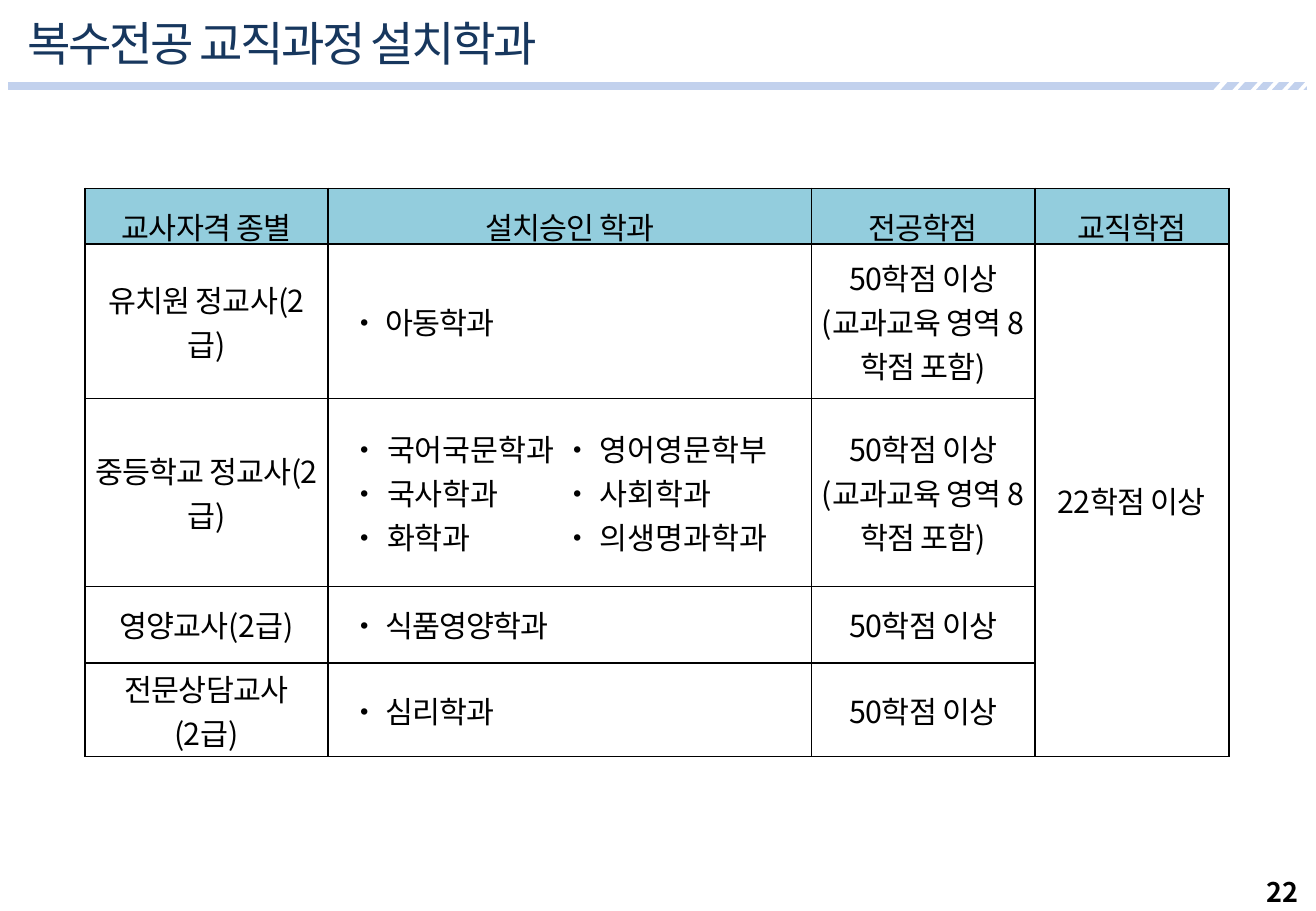
from dataclasses import dataclass

from lxml import etree
from pptx import Presentation
from pptx.dml.color import RGBColor
from pptx.enum.shapes import MSO_CONNECTOR
from pptx.enum.text import MSO_ANCHOR, PP_ALIGN
from pptx.oxml.ns import qn
from pptx.util import Pt

STRAIGHT = MSO_CONNECTOR.STRAIGHT
MIDDLE = MSO_ANCHOR.MIDDLE
LEFT, CENTER = PP_ALIGN.LEFT, PP_ALIGN.CENTER

FONT = "Noto Sans CJK KR"
COLORS = {
    "text": "000000",
    "title": "17375E",
    "rule": "C2D1ED",
    "slash": "FFFFFF",
    "header": "93CDDD",
    "border": "000000",
}

COLUMN_WIDTHS = [144, 286.5, 132.5, 115]
ROW_HEIGHTS = [33, 91.5, 111.5, 45.5, 55.5]
DEPARTMENT_COLUMN = 1
SECOND_DEPARTMENT_TAB = 126
CREDITS = "50학점 이상"
CREDITS_WITH_EDUCATION = CREDITS + "\n(교과교육 영역 8학점 포함)"
TABLE_ROWS = [
    ["교사자격 종별", "설치승인 학과", "전공학점", "교직학점"],
    ["유치원 정교사(2급)", "• 아동학과", CREDITS_WITH_EDUCATION, "22학점 이상"],
    ["중등학교 정교사(2급)",
     "• 국어국문학과\t• 영어영문학부\n• 국사학과\t• 사회학과\n• 화학과\t• 의생명과학과",
     CREDITS_WITH_EDUCATION, ""],
    ["영양교사(2급)", "• 식품영양학과", CREDITS, ""],
    ["전문상담교사\n(2급)", "• 심리학과", CREDITS, ""],
]


@dataclass
class TextStyle:
    size: float
    color: str = "text"
    bold: bool = False
    spacing: float = 0


@dataclass
class Label:
    text: str
    left: float
    top: float
    width: float
    height: float
    style: TextStyle
    wrap: bool


@dataclass
class Line:
    start: tuple[float, float]
    end: tuple[float, float]
    color: str
    width: float


LABELS = [
    Label("22", 743.8, 515.5, 54, 26.6, TextStyle(16, bold=True), False),
    Label("복수전공 교직과정 설치학과", 9.4, 5, 405.4, 41,
          TextStyle(28, "title", spacing=-1.5), True),
]
SLASH_LEFTS = [720, 730.8, 741.6, 751, 760.3, 769.7]
LINES = [Line((774.7, 51.1), (5, 51.1), "rule", 4.5)] + [
    Line((left, 54.7), (left + 6.5, 47.5), "slash", 2.25 if index else 3)
    for index, left in enumerate(SLASH_LEFTS)
]


def rgb(name: str) -> RGBColor:
    return RGBColor.from_string(COLORS[name])


def format_runs(paragraph, style: TextStyle) -> None:
    for run in paragraph.runs:
        run.font.name = FONT
        run.font.size = Pt(style.size)
        run.font.bold = style.bold
        run.font.color.rgb = rgb(style.color)
        properties = run.font._element
        properties.set("spc", str(int(style.spacing * 100)))
        etree.SubElement(properties, qn("a:ea"), typeface=FONT)


def add_label(slide, label: Label) -> None:
    shape = slide.shapes.add_textbox(
        Pt(label.left), Pt(label.top), Pt(label.width), Pt(label.height))
    shape.text_frame.word_wrap = label.wrap
    shape.text_frame.text = label.text
    format_runs(shape.text_frame.paragraphs[0], label.style)


def add_line(slide, line: Line) -> None:
    connector = slide.shapes.add_connector(
        STRAIGHT, *[Pt(value) for value in line.start + line.end])
    connector.line.color.rgb = rgb(line.color)
    connector.line.width = Pt(line.width)
    etree.SubElement(connector._element.spPr, qn("a:effectLst"))


def add_borders(cell) -> None:
    properties = cell._tc.get_or_add_tcPr()
    for side in ("a:lnL", "a:lnR", "a:lnT", "a:lnB"):
        border = etree.SubElement(properties, qn(side), w=str(Pt(1)))
        fill = etree.SubElement(border, qn("a:solidFill"))
        etree.SubElement(fill, qn("a:srgbClr"), val=COLORS["border"])


def add_tab_stop(paragraph, position: float) -> None:
    properties = paragraph._p.get_or_add_pPr()
    tabs = etree.SubElement(properties, qn("a:tabLst"))
    etree.SubElement(tabs, qn("a:tab"), pos=str(Pt(position)), algn="l")


def fill_cell(cell, text: str, is_header: bool, is_department: bool) -> None:
    add_borders(cell)
    if is_header:
        cell.fill.solid()
        cell.fill.fore_color.rgb = rgb("header")
    else:
        cell.fill.background()
    cell.vertical_anchor = MIDDLE
    cell.margin_left = Pt(13 if is_department else 5)
    cell.margin_right = Pt(5)
    cell.margin_top = cell.margin_bottom = Pt(1.4)
    cell.text_frame.text = text
    style = TextStyle(18, spacing=0 if "\t" in text else -0.5)
    for paragraph in cell.text_frame.paragraphs:
        paragraph.alignment = LEFT if is_department else CENTER
        if is_header:
            paragraph.line_spacing = 1.3
        if "\t" in text:
            add_tab_stop(paragraph, SECOND_DEPARTMENT_TAB)
        format_runs(paragraph, style)


def add_department_table(slide) -> None:
    table = slide.shapes.add_table(
        len(ROW_HEIGHTS), len(COLUMN_WIDTHS), Pt(50.4), Pt(111.6),
        Pt(sum(COLUMN_WIDTHS)), Pt(sum(ROW_HEIGHTS))).table
    table.first_row = table.horz_banding = False
    for column, width in zip(table.columns, COLUMN_WIDTHS):
        column.width = Pt(width)
    for row, height in zip(table.rows, ROW_HEIGHTS):
        row.height = Pt(height)
    for row_index, texts in enumerate(TABLE_ROWS):
        for column_index, text in enumerate(texts):
            is_header = row_index == 0
            is_department = column_index == DEPARTMENT_COLUMN and not is_header
            fill_cell(table.cell(row_index, column_index), text,
                      is_header, is_department)
    # Teaching credits apply to every certificate
    table.cell(1, 3).merge(table.cell(4, 3))


def main() -> None:
    presentation = Presentation()
    presentation.slide_width = Pt(780)
    presentation.slide_height = Pt(540)
    slide = presentation.slides.add_slide(presentation.slide_layouts[6])

    # Title rule with slashed end
    for line in LINES:
        add_line(slide, line)

    # Page number and title
    for label in LABELS:
        add_label(slide, label)

    # Departments by teaching certificate
    add_department_table(slide)

    presentation.save("out.pptx")


if __name__ == "__main__":
    main()
